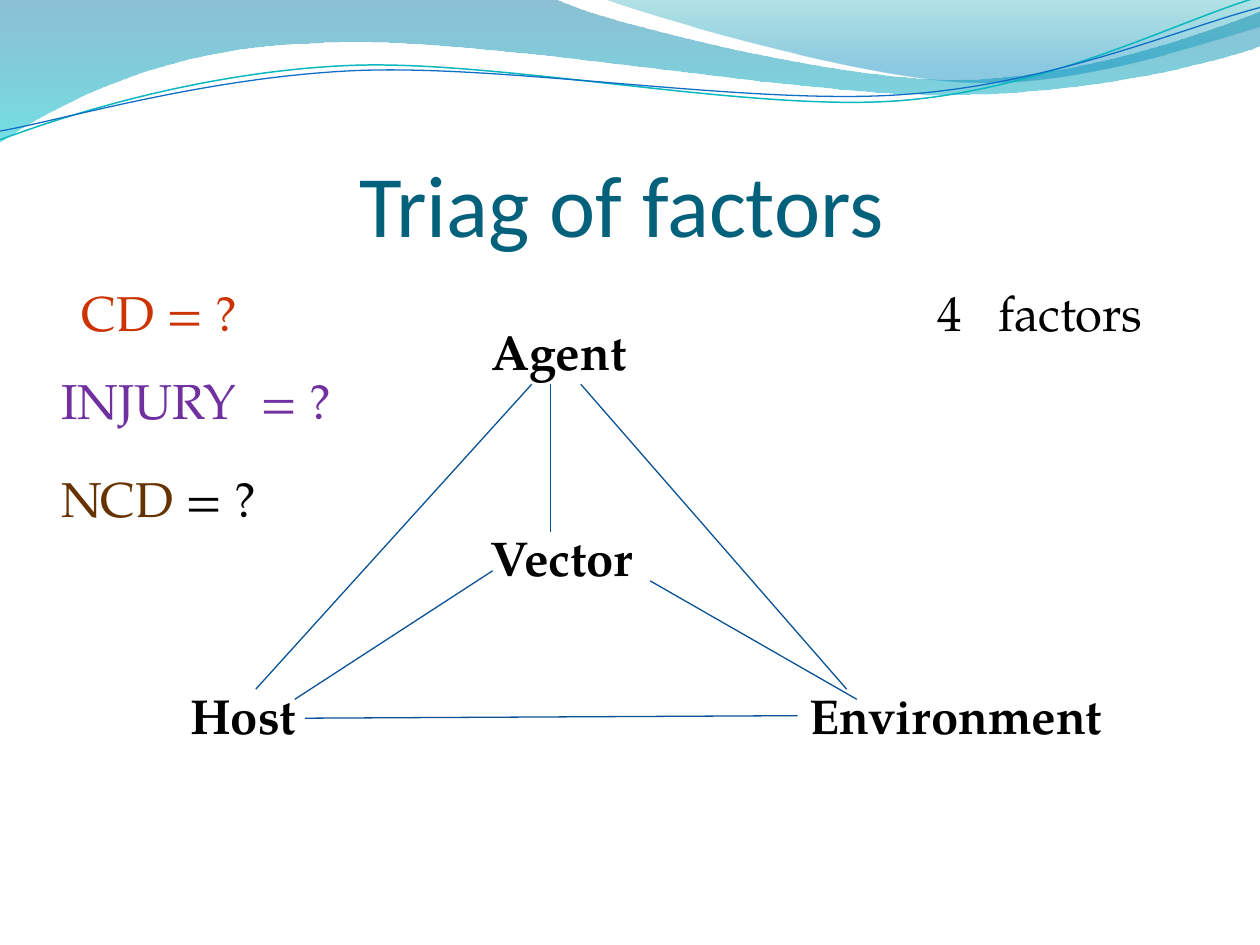
from dataclasses import dataclass
from math import cos, radians, sin

from lxml import etree
from pptx import Presentation
from pptx.dml.color import RGBColor
from pptx.enum.shapes import MSO_CONNECTOR
from pptx.enum.text import MSO_ANCHOR
from pptx.oxml.ns import qn
from pptx.util import Inches, Pt

Point = tuple[float, float]


@dataclass(frozen=True)
class Theme:
    title_font: str = "Calibri"
    body_font: str = "TeX Gyre Pagella"
    title_size: float = 50
    body_size: float = 28
    line_width: float = 0.75
    title: str = "04617B"
    black: str = "000000"
    line: str = "095295"
    red: str = "CC3300"
    purple: str = "7030A0"
    brown: str = "663300"
    teal_wave: str = "0AB8BF"
    blue_wave: str = "0F6FC6"


@dataclass(frozen=True)
class Stop:
    position: float
    color: str
    alpha: int  # percent


@dataclass(frozen=True)
class Outline:
    start: Point
    segments: tuple[tuple[Point, ...], ...]  # one point: line, three: cubic curve


@dataclass(frozen=True)
class Label:
    runs: tuple[tuple[str, str], ...]  # (text, colour)
    left: float
    top: float
    width: float
    height: float = 0.57
    inset: float = 0.1
    bold: bool = False


T = Theme()
WAVE_TILT = -2.7  # degrees
WAVE_CENTER = (4.99, 0.58)


def untilt(point: Point) -> Point:
    """Position of a wave point before the wave is tilted."""
    a = radians(-WAVE_TILT)
    dx, dy = point[0] - WAVE_CENTER[0], point[1] - WAVE_CENTER[1]
    return (WAVE_CENTER[0] + dx * cos(a) - dy * sin(a),
            WAVE_CENTER[1] + dx * sin(a) + dy * cos(a))


def add_outline(shapes, outline: Outline, close: bool):
    builder = shapes.build_freeform(*map(Inches, outline.start))
    builder.add_line_segments([tuple(map(Inches, seg[-1])) for seg in outline.segments],
                              close=close)
    s = builder.convert_to_shape()
    s.shadow.inherit = False
    # Turn the straight pieces into cubic curves where three points are given
    for piece, seg in zip(list(s.element.iter(qn("a:lnTo"))), outline.segments):
        if len(seg) == 3:
            bezier = etree.Element(qn("a:cubicBezTo"))
            for x, y in seg:
                etree.SubElement(bezier, qn("a:pt"), x=str(Inches(x) - s.left),
                                 y=str(Inches(y) - s.top))
            piece.getparent().replace(piece, bezier)
    return s


def add_band(shapes, outline: Outline, stops: tuple[Stop, Stop]) -> None:
    s = add_outline(shapes, outline, close=True)
    s.line.fill.background()
    s.fill.gradient()
    s.fill.gradient_angle = 270  # top to bottom
    for target, stop in zip(s.fill.gradient_stops, stops):
        target.position = stop.position
        target.color.rgb = RGBColor.from_string(stop.color)
    for color, stop in zip(s.element.spPr.iter(qn("a:srgbClr")), stops):
        etree.SubElement(color, qn("a:alpha")).set("val", str(stop.alpha * 1000))


def add_wave(shapes, outline: Outline, color: str, width: float) -> None:
    level = Outline(untilt(outline.start),
                    tuple(tuple(map(untilt, seg)) for seg in outline.segments))
    s = add_outline(shapes, level, close=False)
    s.rotation = WAVE_TILT
    s.fill.background()
    s.line.color.rgb = RGBColor.from_string(color)
    s.line.width = Pt(width)


def add_link(shapes, start: Point, end: Point) -> None:
    s = shapes.add_connector(MSO_CONNECTOR.STRAIGHT, *map(Inches, start + end))
    s.line.color.rgb = RGBColor.from_string(T.line)
    s.line.width = Pt(T.line_width)
    etree.SubElement(s.element.spPr, qn("a:effectLst"))


def add_label(shapes, label: Label, font: str = T.body_font, size: float = T.body_size,
              anchor: MSO_ANCHOR = MSO_ANCHOR.TOP, bottom: float = 0.05) -> None:
    s = shapes.add_textbox(*map(Inches, (label.left, label.top, label.width, label.height)))
    tf = s.text_frame
    tf.word_wrap = True
    tf.vertical_anchor = anchor
    tf.margin_left, tf.margin_bottom = Inches(label.inset), Inches(bottom)
    p = tf.paragraphs[0]
    p.font.name, p.font.size, p.font.bold = font, Pt(size), label.bold
    for text, color in label.runs:
        r = p.add_run()
        r.text = text
        r.font.color.rgb = RGBColor.from_string(color)


# Header bands and waves
LEFT_BAND = Outline((0, 0), (
    ((4.4, -0.01),),
    ((4.76, 0.17), (6.64, 0.63), (7.58, 0.63)),
    ((8.53, 0.63), (9.58, 0.26), (10, 0.09)),
    ((10.01, 0.36),),
    ((9.83, 0.44), (8.7, 0.76), (7.46, 0.75)),
    ((6.22, 0.75), (3.82, 0.28), (2.57, 0.34)),
    ((1.29, 0.36), (0.46, 0.83), (-0.01, 1.13)),
    ((0, 0),),
))
RIGHT_BAND = Outline((4.79, -0.01), (
    ((5.09, 0.11), (6.82, 0.62), (7.69, 0.65)),
    ((8.56, 0.69), (9.61, 0.32), (10, 0.21)),
    ((10, 0),),
    ((4.79, -0.01),),
))
TEAL_WAVE = Outline((0, 1.11), (
    ((0.48, 0.93), (1.58, 0.57), (2.77, 0.52)),
    ((3.95, 0.47), (5.93, 0.89), (7.13, 0.8)),
    ((8.33, 0.71), (9.38, 0.15), (9.98, -0.02)),
))
BLUE_WAVE = Outline((0, 1.04), (
    ((0.47, 0.96), (1.64, 0.61), (2.83, 0.56)),
    ((4.03, 0.51), (5.97, 0.84), (7.17, 0.75)),
    ((8.36, 0.67), (9.41, 0.21), (10, 0.06)),
))

# Text
TITLE = Label((("Triag of factors", T.title),), 0.5, 0.77, 9, 1.25, inset=2.35)
LABELS = (
    Label((("Agent", T.black),), 3.52, 2.5, 1.8, inset=0.38, bold=True),
    Label((("Host", T.black),), 1.41, 5.39, 2.11, bold=True),
    Label((("Environment", T.black),), 6.33, 5.39, 2.66, bold=True),
    Label((("Vector", T.black),), 3.59, 4.14, 1.72, inset=0.3, bold=True),
)
NOTES = (
    Label((("4   factors", T.black),), 7.34, 2.19, 2.19),
    Label((("INJURY  = ?", T.purple),), 0.39, 2.89, 3.13),
    Label((("NCD", T.brown), (" = ?", T.black)), 0.39, 3.67, 3.36),
    Label((("CD = ?", T.red),), 0.55, 2.19, 1.56),
)

# Links between the factors
LINKS = (
    ((2.03, 5.47), (4.22, 3.05)),  # host to agent
    ((4.61, 3.05), (6.72, 5.47)),  # agent to environment
    ((2.42, 5.7), (6.33, 5.68)),   # host to environment
    ((2.34, 5.55), (3.91, 4.53)),  # host to vector
    ((5.16, 4.61), (6.8, 5.55)),   # vector to environment
    ((4.37, 3.05), (4.37, 4.22)),  # agent to vector
)


def main() -> None:
    prs = Presentation()
    prs.slide_width, prs.slide_height = Inches(10), Inches(7.5)
    shapes = prs.slides.add_slide(prs.slide_layouts[6]).shapes

    add_band(shapes, LEFT_BAND, (Stop(0, "0074A1", 45), Stop(1, "00C6CF", 55)))
    add_band(shapes, RIGHT_BAND, (Stop(0, "00A1A9", 30), Stop(0.8, "008BBF", 45)))
    add_wave(shapes, TEAL_WAVE, T.teal_wave, 0.85)
    add_wave(shapes, BLUE_WAVE, T.blue_wave, T.line_width)

    add_label(shapes, TITLE, T.title_font, T.title_size, MSO_ANCHOR.BOTTOM, bottom=0)
    for label in LABELS:
        add_label(shapes, label)
    for start, end in LINKS:
        add_link(shapes, start, end)
    for note in NOTES:
        add_label(shapes, note)

    prs.save("out.pptx")


if __name__ == "__main__":
    main()
